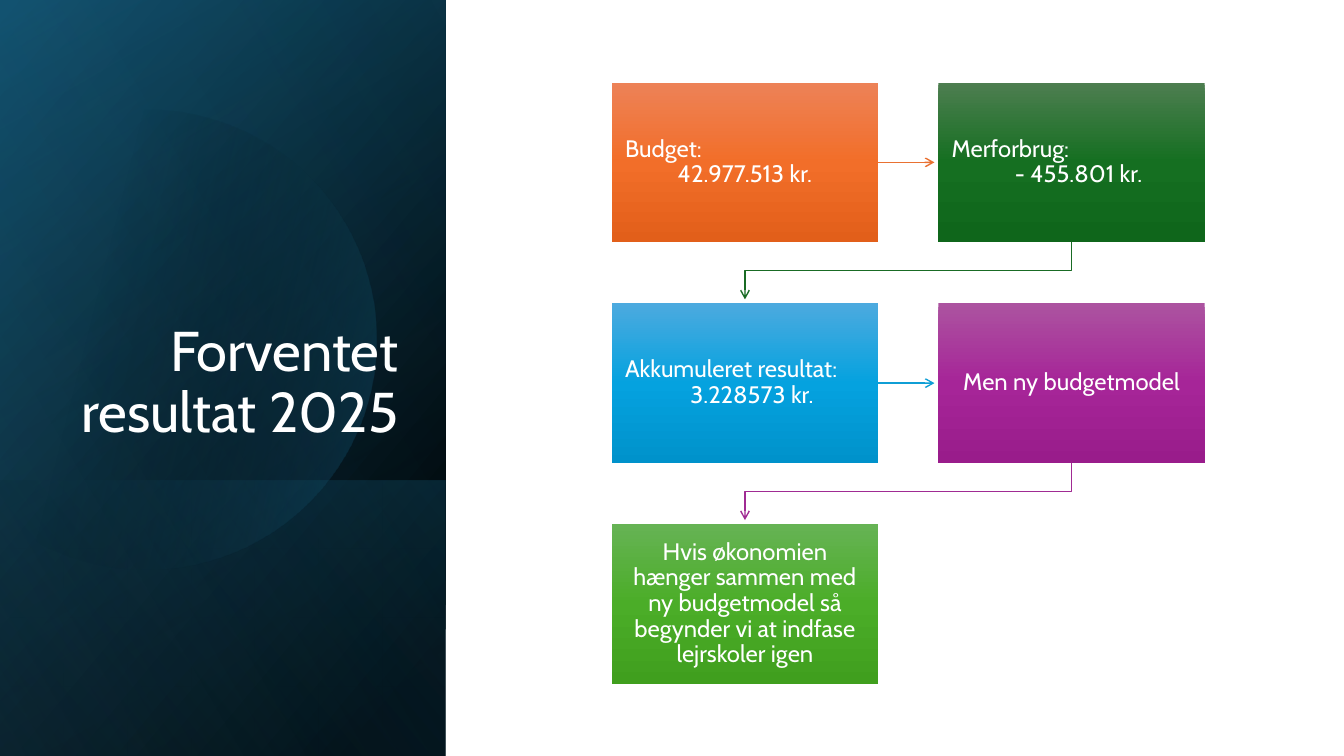
"""Builds the slide on the expected result for 2025: a dark title panel and a flow of cards."""
from math import acos, cos, pi, sin

from lxml import etree
from pptx import Presentation
from pptx.dml.color import RGBColor
from pptx.enum.shapes import MSO_CONNECTOR, MSO_SHAPE
from pptx.enum.text import MSO_ANCHOR, PP_ALIGN
from pptx.oxml.ns import qn
from pptx.util import Inches, Pt

RECTANGLE = MSO_SHAPE.RECTANGLE
STRAIGHT, ELBOW = MSO_CONNECTOR.STRAIGHT, MSO_CONNECTOR.ELBOW
LEFT, CENTER, RIGHT = PP_ALIGN.LEFT, PP_ALIGN.CENTER, PP_ALIGN.RIGHT
MIDDLE, BOTTOM = MSO_ANCHOR.MIDDLE, MSO_ANCHOR.BOTTOM

WIDTH, HEIGHT = Inches(13.33), Inches(7.5)
FONT = "Cabin"
COLORS = {
    "white": "FFFFFF", "black": "000000", "navy": "104862", "teal": "156082", "sky": "46B1E1",
    "orange": "E97132", "green": "196B24", "blue": "0F9ED5", "purple": "A02B93",
}
CARD_SHADES = {
    "orange": ("ED8257", "F26E29", "E25F1A"),
    "green": ("4D7E50", "156F21", "0F661B"),
    "blue": ("4CAADF", "05A2DF", "0092CB"),
    "purple": ("AC53A0", "A62598", "991C8B"),
    "lime": ("66B354", "4BAD28", "409F1E"),
}
PANEL_WIDTH = 33.16
CARD_LEFT, CARD_TOP = 45.53, 10.93
CARD_WIDTH, CARD_HEIGHT = 19.8, 21.1
COLUMN_STEP, ROW_STEP = 24.3, 29.2
ARROW_GAP = 0.3


def across(share):
    """Turn a percentage of the slide width into a length."""
    return round(WIDTH * share / 100)


def down(share):
    """Turn a percentage of the slide height into a length."""
    return round(HEIGHT * share / 100)


def card_place(column, row):
    """Return the left and top of a card in the grid."""
    return across(CARD_LEFT + column * COLUMN_STEP), down(CARD_TOP + row * ROW_STEP)


def write(paragraph, text, size=17, color="white", align=CENTER, indent=0.0):
    """Put one formatted span of text into a paragraph."""
    paragraph.alignment = align
    paragraph.line_spacing = 0.9
    paragraph.space_before = Pt(0)
    if indent:
        paragraph._p.get_or_add_pPr().set("marL", str(Inches(indent)))
    span = paragraph.add_run()
    span.text = text
    span.font.name = FONT
    span.font.size = Pt(size)
    span.font.color.rgb = RGBColor.from_string(COLORS[color])


class Page:
    """Holds the current slide and draws its elements in one style."""

    def __init__(self, deck):
        """Start a slide with only a title."""
        self.slide = deck.slides.add_slide(deck.slide_layouts[5])
        self.shapes = self.slide.shapes

    def gradient(self, shape, stops, angle):
        """Fill a shape with stops of position, hex colour and opacity."""
        shape.shadow.inherit = False
        shape.line.fill.background()
        shape.fill.gradient()
        shape.fill.gradient_angle = 360 - angle
        stop_list = shape._element.spPr.find(".//" + qn("a:gsLst"))
        for old_stop in list(stop_list):
            stop_list.remove(old_stop)
        for position, color, opacity in stops:
            stop = etree.SubElement(stop_list, qn("a:gs"), pos=str(position * 1000))
            tone = etree.SubElement(stop, qn("a:srgbClr"), val=color)
            if opacity < 100:
                etree.SubElement(tone, qn("a:alpha"), val=str(opacity * 1000))

    def panel(self, top, stops, angle):
        """Draw a turned, mirrored panel layer from a top share to the slide's foot."""
        width, height = across(PANEL_WIDTH), down(100 - top)
        left = (width - height) // 2
        upper = down(top) + (height - width) // 2
        layer = self.shapes.add_shape(RECTANGLE, left, upper, height, width)
        layer.rotation = 90
        layer._element.spPr.xfrm.set("flipH", "1")
        self.gradient(layer, stops, angle)

    def disc(self, center_x, center_y, radius, stops, angle):
        """Draw a disc cut off by the left edge of the slide."""
        middle_x, middle_y, reach = across(center_x), down(center_y), down(radius)
        limit = acos(-middle_x / reach)
        steps = 120
        angles = [limit * (2 * step / steps - 1) for step in range(steps + 1)]
        points = [(round(middle_x + reach * cos(turn)), round(middle_y + reach * sin(turn)))
                  for turn in angles]
        builder = self.shapes.build_freeform(*points[0])
        builder.add_line_segments(points[1:], close=True)
        self.gradient(builder.convert_to_shape(), stops, angle)

    def title(self, text, left, top, width, height):
        """Move and format the title placeholder."""
        box = self.shapes.title
        box.left, box.top = across(left), down(top)
        box.width, box.height = across(width), down(height)
        box.text_frame.word_wrap = True
        box.text_frame.vertical_anchor = BOTTOM
        write(box.text_frame.paragraphs[0], text, size=40, align=RIGHT)
        self.shapes._spTree.append(box._element)

    def card(self, column, row, shade, lines):
        """Draw a card with lines of text, alignment and indent."""
        box = self.shapes.add_shape(RECTANGLE, *card_place(column, row),
                                    across(CARD_WIDTH), down(CARD_HEIGHT))
        tones = CARD_SHADES[shade]
        self.gradient(box, [(50 * index, tone, 100) for index, tone in enumerate(tones)], 90)
        frame = box.text_frame
        frame.word_wrap = True
        frame.vertical_anchor = MIDDLE
        frame.margin_left = frame.margin_right = Inches(0.13)
        frame.margin_top = frame.margin_bottom = Inches(0.14)
        for index, (text, align, indent) in enumerate(lines):
            paragraph = frame.add_paragraph() if index else frame.paragraphs[0]
            write(paragraph, text, align=align, indent=indent)

    def arrow(self, kind, start, end, color):
        """Draw a thin connector with an open arrowhead."""
        connector = self.shapes.add_connector(kind, *start, *end)
        connector.line.width = Pt(1)
        connector.line.color.rgb = RGBColor.from_string(COLORS[color])
        properties = connector._element.spPr
        etree.SubElement(properties.find(qn("a:ln")), qn("a:tailEnd"), type="arrow")
        etree.SubElement(properties, qn("a:effectLst"))
        return connector

    def arrow_right(self, row, color):
        """Link the first card of a row to the second."""
        left, top = card_place(0, row)
        level = top + down(CARD_HEIGHT) // 2
        end = card_place(1, row)[0] - across(ARROW_GAP)
        self.arrow(STRAIGHT, (left + across(CARD_WIDTH), level), (end, level), color)

    def arrow_down(self, row, color):
        """Link the second card of a row to the first card of the next."""
        start_x, start_y = card_place(1, row)
        end_x, end_y = card_place(0, row + 1)
        start_y += down(CARD_HEIGHT)
        end_y -= across(ARROW_GAP)
        middle_x = (start_x + end_x + across(CARD_WIDTH)) // 2
        middle_y = (start_y + end_y) // 2
        half_drop, half_span = (end_y - start_y) // 2, (start_x - end_x) // 2
        connector = self.arrow(ELBOW, (middle_x - half_drop, middle_y - half_span),
                               (middle_x + half_drop, middle_y + half_span), color)
        connector._element.spPr.xfrm.set("rot", str(90 * 60000))


def main():
    """Compose the slide and save it."""
    deck = Presentation()
    deck.slide_width, deck.slide_height = WIDTH, HEIGHT
    page = Page(deck)
    black, navy, teal, sky = (COLORS[name] for name in ("black", "navy", "teal", "sky"))

    page.panel(0, [(8, black, 100), (100, navy, 100)], 50)
    page.panel(0, [(0, black, 0), (99, teal, 46)], 30)
    page.panel(63.5, [(2, teal, 29), (100, black, 30)], 130)
    page.disc(10.9, 44.9, 30.4, [(29, black, 0), (100, teal, 43)], 14)
    page.panel(0, [(0, black, 0), (99, sky, 11)], 120)
    page.title("Forventet resultat 2025", 4.8, 24.53, 25.58, 34.93)

    cards = [
        ("orange", [("Budget:", LEFT, 0), ("42.977.513 kr.", CENTER, 0)]),
        ("green", [("Merforbrug:", LEFT, 0), ("- 455.801 kr.", CENTER, 0.14)]),
        ("blue", [("Akkumuleret resultat:", LEFT, 0), ("3.228573 kr.", CENTER, 0.14)]),
        ("purple", [("Men ny budgetmodel", CENTER, 0)]),
        ("lime", [("Hvis økonomien hænger sammen med ny budgetmodel så begynder vi at "
                   "indfase lejrskoler igen", CENTER, 0)]),
    ]
    for index, (shade, lines) in enumerate(cards):
        page.card(index % 2, index // 2, shade, lines)
    for row, (right_color, down_color) in enumerate([("orange", "green"), ("blue", "purple")]):
        page.arrow_right(row, right_color)
        page.arrow_down(row, down_color)
    deck.save("out.pptx")


if __name__ == "__main__":
    main()
